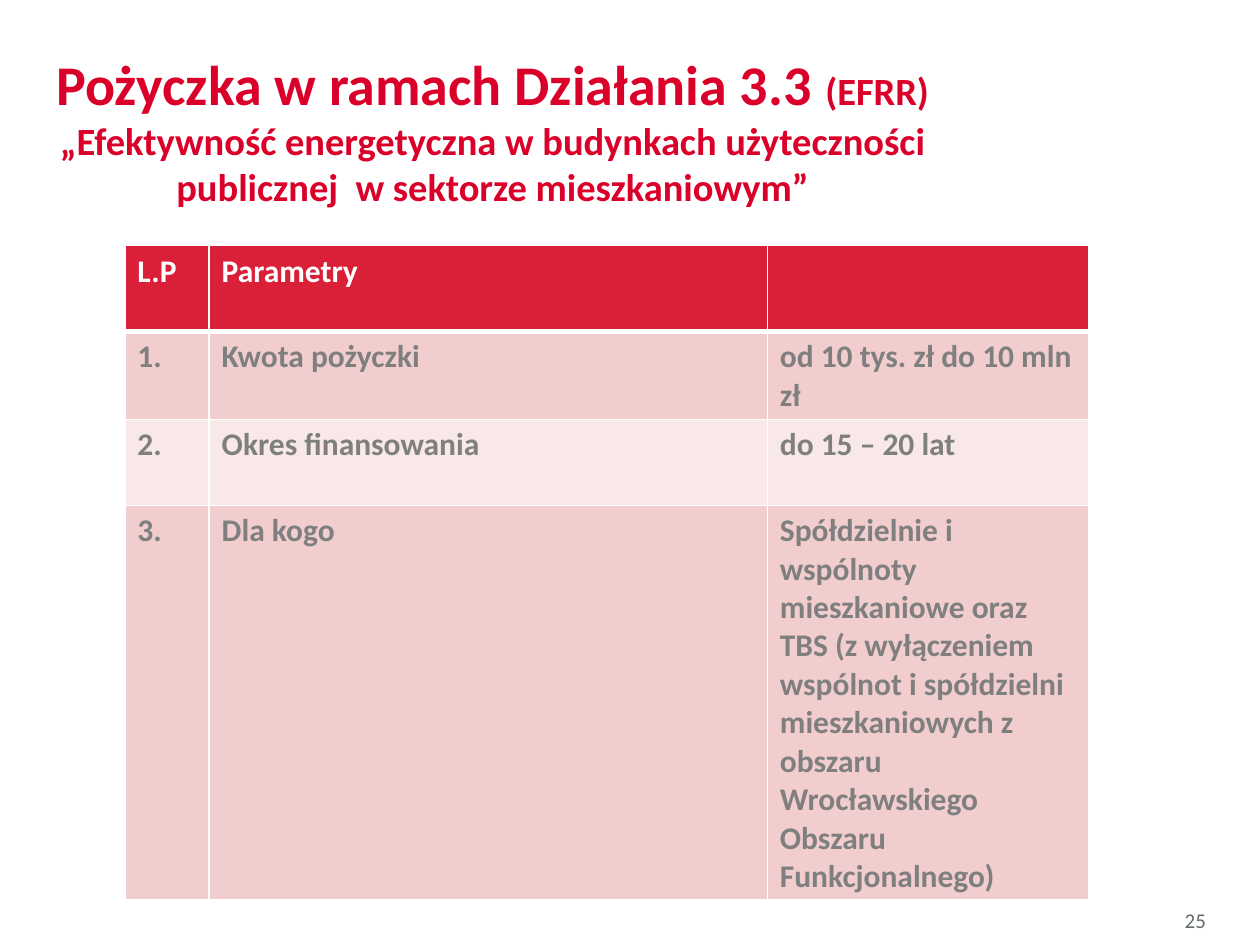
from dataclasses import dataclass

from lxml import etree
from pptx import Presentation, util as u
from pptx.dml.color import RGBColor
from pptx.enum import text
from pptx.oxml import ns


@dataclass(frozen=True)
class Theme:
    font: str = "Calibri"
    title: str = "DA0029"
    header: str = "DA2038"
    bands: tuple = ("F1CDCE", "F8E8E8")
    white: str = "FFFFFF"
    body: str = "7F7F7F"
    number: str = "636B71"
    title_size: int = 32
    subtitle_size: int = 22
    table_size: int = 18
    number_size: int = 12


T = Theme()
COLS = (0.67, 4.43, 2.55)
ROWS = (0.68, 0.68, 0.68, 3.13)
PARAMETERS = (
    ("L.P", "Parametry", ""),
    ("1.", "Kwota pożyczki", "od 10 tys. zł do 10 mln zł"),
    ("2.", "Okres finansowania", "do 15 – 20 lat"),
    ("3.", "Dla kogo",
     "Spółdzielnie i wspólnoty mieszkaniowe oraz TBS (z wyłączeniem "
     "wspólnot i spółdzielni mieszkaniowych z obszaru Wrocławskiego "
     "Obszaru Funkcjonalnego)"),
)


def add_text(p, content, *, size, color, bold=False):
    r = p.add_run()
    r.text = content
    r.font.name = T.font
    r.font.size = u.Pt(size)
    r.font.bold = bold
    r.font.color.rgb = RGBColor.from_string(color)


def add_box(slide, left, top, width, height, align):
    """Add a wrapping, middle-anchored text box and return its paragraph."""
    sp = slide.shapes.add_textbox(*map(u.Inches, (left, top, width, height)))
    tf = sp.text_frame
    tf.word_wrap = True
    tf.vertical_anchor = text.MSO_ANCHOR.MIDDLE
    p = tf.paragraphs[0]
    p.alignment = align
    return p


def set_borders(cell, bottom):
    """Draw white cell borders; they must precede the fill in the XML."""
    props = cell._tc.get_or_add_tcPr()
    for side, width in (("L", 1), ("R", 1), ("T", 1), ("B", bottom)):
        ln = etree.SubElement(props, ns.qn(f"a:ln{side}"), w=str(u.Pt(width)))
        fill = etree.SubElement(ln, ns.qn("a:solidFill"))
        etree.SubElement(fill, ns.qn("a:srgbClr"), val=T.white)


def add_parameters(slide, left, top):
    size = map(u.Inches, (left, top, sum(COLS), sum(ROWS)))
    table = slide.shapes.add_table(len(ROWS), len(COLS), *size).table
    for col, width in zip(table.columns, COLS):
        col.width = u.Inches(width)
    for i, (row, height) in enumerate(zip(table.rows, ROWS)):
        row.height = u.Inches(height)
        is_header = i == 0
        fill = T.header if is_header else T.bands[(i - 1) % 2]
        color = T.white if is_header else T.body
        for cell, content in zip(row.cells, PARAMETERS[i]):
            set_borders(cell, bottom=3 if is_header else 1)
            cell.fill.solid()
            cell.fill.fore_color.rgb = RGBColor.from_string(fill)
            p = cell.text_frame.paragraphs[0]
            if content:
                add_text(p, content, size=T.table_size, color=color, bold=True)


def main():
    prs = Presentation()
    prs.slide_width, prs.slide_height = u.Inches(10), u.Inches(7.5)
    slide = prs.slides.add_slide(prs.slide_layouts[6])

    # Page number
    p = add_box(slide, 7.53, 7.1, 2.14, 0.4, text.PP_ALIGN.RIGHT)
    add_text(p, "25", size=T.number_size, color=T.number)

    # Title with a smaller second part
    p = add_box(slide, 0.31, 0.3, 7.2, 1.45, text.PP_ALIGN.CENTER)
    add_text(p, "Pożyczka w ramach Działania 3.3 ",
             size=T.title_size, color=T.title, bold=True)
    subtitle = dict(size=T.subtitle_size, color=T.title, bold=True)
    add_text(p, "(EFRR)", **subtitle)
    p.add_line_break()
    add_text(p, "„Efektywność energetyczna w budynkach użyteczności "
             "publicznej  w sektorze mieszkaniowym”", **subtitle)

    # Loan parameters
    add_parameters(slide, 0.99, 1.95)

    prs.save("out.pptx")


if __name__ == "__main__":
    main()
